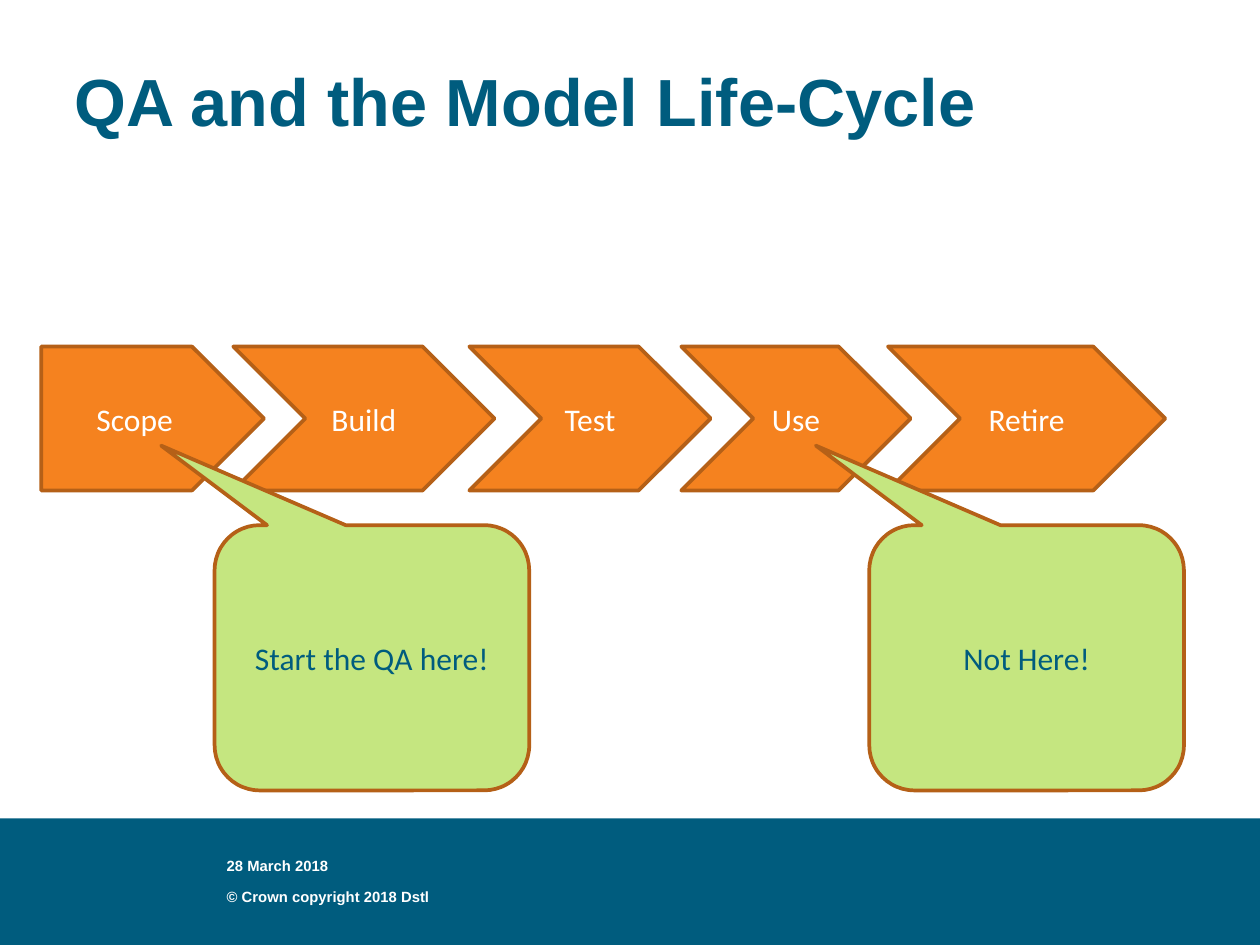
from dataclasses import dataclass

from pptx import Presentation
from pptx.dml.color import RGBColor
from pptx.enum.shapes import MSO_SHAPE
from pptx.enum.text import MSO_ANCHOR, PP_ALIGN
from pptx.shapes.autoshape import Shape
from pptx.slide import Slide
from pptx.util import Inches, Pt

RECTANGLE = MSO_SHAPE.RECTANGLE
PENTAGON = MSO_SHAPE.PENTAGON
CHEVRON = MSO_SHAPE.CHEVRON
CALLOUT = MSO_SHAPE.ROUNDED_RECTANGULAR_CALLOUT
TOP, MIDDLE, BOTTOM = MSO_ANCHOR.TOP, MSO_ANCHOR.MIDDLE, MSO_ANCHOR.BOTTOM
LEFT, CENTER = PP_ALIGN.LEFT, PP_ALIGN.CENTER


@dataclass(frozen=True)
class TextStyle:
    font: str
    size: float
    color: str
    bold: bool = False
    align: PP_ALIGN = LEFT
    line_spacing: float = 1.0


@dataclass(frozen=True)
class Theme:
    band: str = "005C7E"
    stage: str = "F5821F"
    callout: str = "C5E680"
    outline: str = "B56017"
    outline_width: float = 2
    title: TextStyle = TextStyle("Arial", 36, "005C7E", bold=True, line_spacing=1.2)
    footer: TextStyle = TextStyle("Arial", 8, "FFFFFF", bold=True)
    stage_label: TextStyle = TextStyle("Calibri", 17, "FFFFFF", align=CENTER)
    callout_label: TextStyle = TextStyle("Calibri", 17, "005C7E", align=CENTER)


@dataclass(frozen=True)
class Area:
    left: float
    top: float
    width: float
    height: float

    def lengths(self) -> tuple[Inches, Inches, Inches, Inches]:
        return (Inches(self.left), Inches(self.top),
                Inches(self.width), Inches(self.height))


@dataclass(frozen=True)
class Stage:
    label: str
    left: float
    width: float
    outline: MSO_SHAPE = CHEVRON


@dataclass(frozen=True)
class Callout:
    label: str
    left: float


@dataclass(frozen=True)
class Caption:
    text: str
    area: Area
    style: TextStyle
    anchor: MSO_ANCHOR = TOP


THEME = Theme()
PAGE_WIDTH, PAGE_HEIGHT = 9.45, 7.09
BAND_TOP = 6.14
STAGE_TOP, STAGE_HEIGHT = 2.6, 1.08
CALLOUT_TOP, CALLOUT_WIDTH, CALLOUT_HEIGHT = 3.94, 2.36, 1.99
CALLOUT_ADJUSTMENTS = (-0.67, -0.8, 0.17)

CAPTIONS = (
    Caption("QA and the Model Life-Cycle", Area(0.47, 0.28, 8.51, 1.18), THEME.title),
    Caption("28 March 2018", Area(1.61, 6.3, 1.81, 0.31), THEME.footer, BOTTOM),
    Caption("© Crown copyright 2018 Dstl", Area(1.61, 6.61, 1.81, 0.31), THEME.footer),
)
STAGES = (
    Stage("Scope", 0.31, 1.67, PENTAGON),
    Stage("Build", 1.75, 1.96),
    Stage("Test", 3.52, 1.81),
    Stage("Use", 5.11, 1.72),
    Stage("Retire", 6.66, 2.08),
)
CALLOUTS = (Callout("Start the QA here!", 1.61), Callout("Not Here!", 6.52))


def write(box: Shape, text: str, style: TextStyle, anchor: MSO_ANCHOR) -> None:
    frame = box.text_frame
    frame.word_wrap = True
    frame.vertical_anchor = anchor
    para = frame.paragraphs[0]
    para.alignment = style.align
    para.line_spacing = style.line_spacing
    span = para.add_run()
    span.text = text
    span.font.name = style.font
    span.font.size = Pt(style.size)
    span.font.bold = style.bold
    span.font.color.rgb = RGBColor.from_string(style.color)


def add_filled(page: Slide, outline: MSO_SHAPE, area: Area, fill: str) -> Shape:
    box = page.shapes.add_shape(outline, *area.lengths())
    box.shadow.inherit = False
    box.fill.solid()
    box.fill.fore_color.rgb = RGBColor.from_string(fill)
    box.line.fill.background()
    return box


def add_outlined(page: Slide, outline: MSO_SHAPE, area: Area, fill: str,
                 label: str, style: TextStyle) -> Shape:
    box = add_filled(page, outline, area, fill)
    box.line.color.rgb = RGBColor.from_string(THEME.outline)
    box.line.width = Pt(THEME.outline_width)
    write(box, label, style, MIDDLE)
    return box


def add_caption(page: Slide, caption: Caption) -> None:
    box = page.shapes.add_textbox(*caption.area.lengths())
    write(box, caption.text, caption.style, caption.anchor)
    frame = box.text_frame
    frame.margin_left = frame.margin_right = Inches(0.09)
    frame.margin_top = frame.margin_bottom = Inches(0.05)


def add_stage(page: Slide, stage: Stage) -> None:
    area = Area(stage.left, STAGE_TOP, stage.width, STAGE_HEIGHT)
    add_outlined(page, stage.outline, area, THEME.stage, stage.label, THEME.stage_label)


def add_callout(page: Slide, callout: Callout) -> None:
    area = Area(callout.left, CALLOUT_TOP, CALLOUT_WIDTH, CALLOUT_HEIGHT)
    box = add_outlined(page, CALLOUT, area, THEME.callout,
                       callout.label, THEME.callout_label)
    for index, value in enumerate(CALLOUT_ADJUSTMENTS):
        box.adjustments[index] = value


def main() -> None:
    deck = Presentation()
    deck.slide_width = Inches(PAGE_WIDTH)
    deck.slide_height = Inches(PAGE_HEIGHT)
    page = deck.slides.add_slide(deck.slide_layouts[6])
    band = Area(0, BAND_TOP, PAGE_WIDTH, PAGE_HEIGHT - BAND_TOP)
    add_filled(page, RECTANGLE, band, THEME.band)
    for caption in CAPTIONS:
        add_caption(page, caption)
    for stage in STAGES:
        add_stage(page, stage)
    for callout in CALLOUTS:
        add_callout(page, callout)
    deck.save("out.pptx")


if __name__ == "__main__":
    main()
